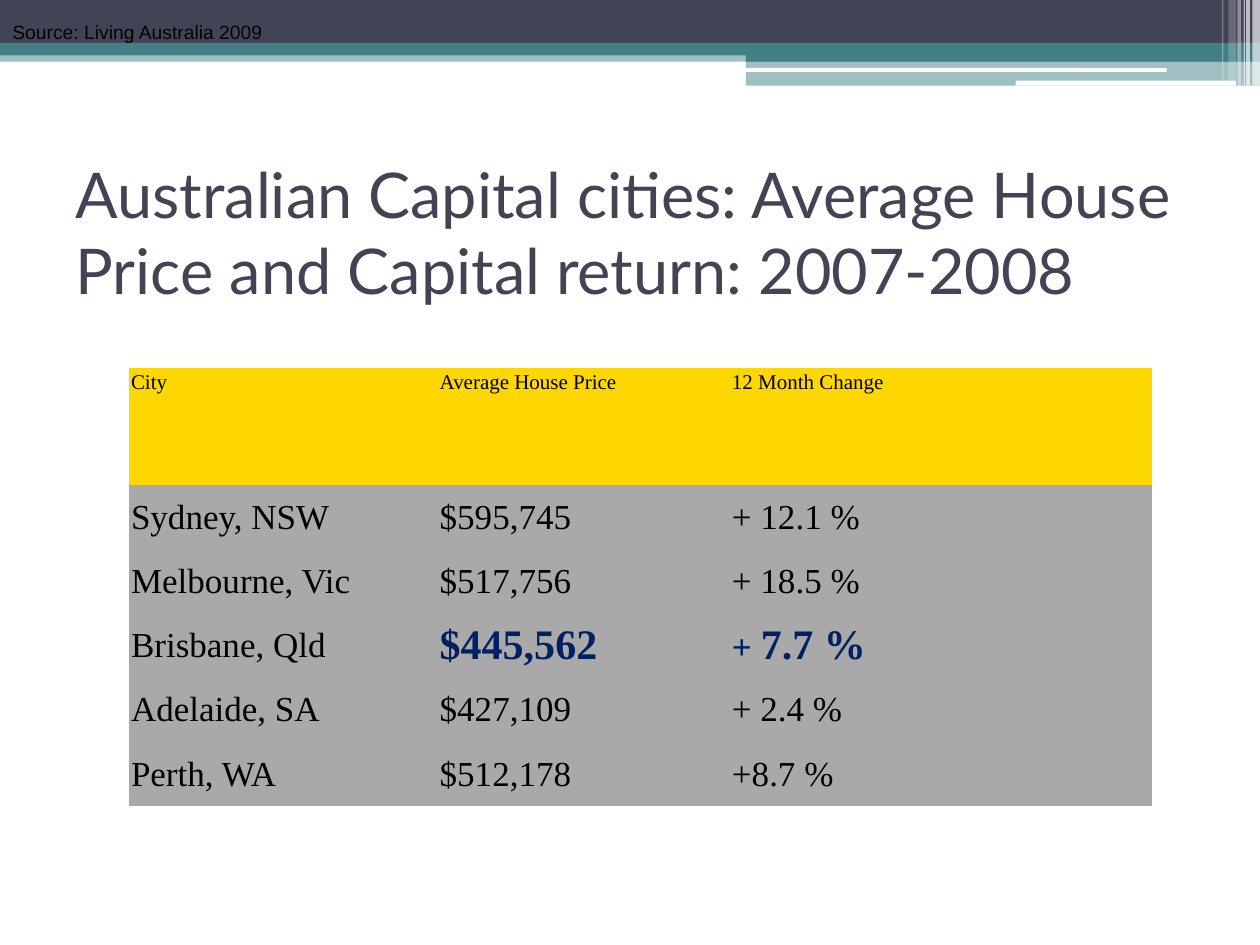
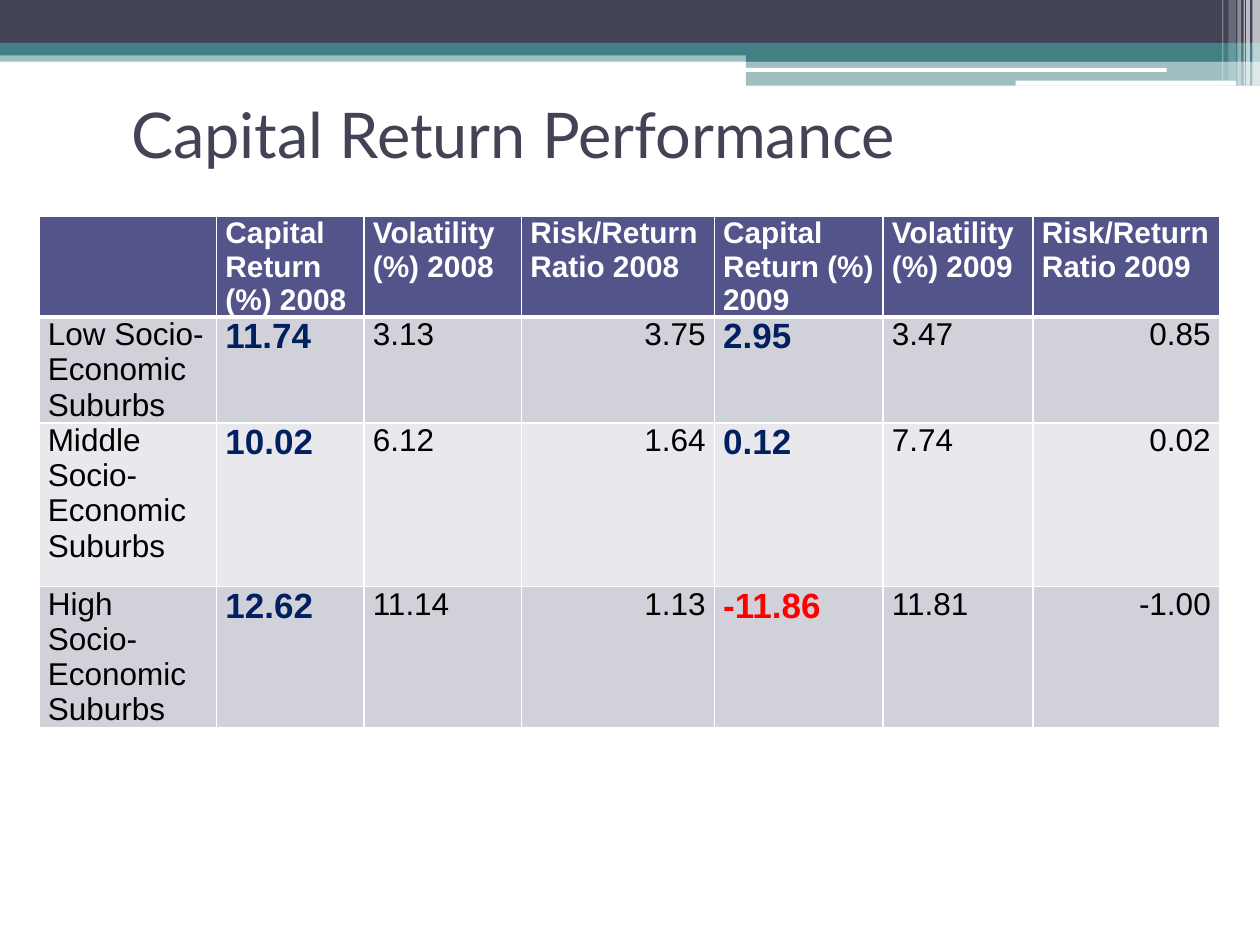
from lxml import etree
from pptx import Presentation
from pptx.dml.color import RGBColor
from pptx.enum.shapes import MSO_SHAPE
from pptx.enum.text import MSO_ANCHOR, MSO_AUTO_SIZE, PP_ALIGN
from pptx.oxml.ns import qn
from pptx.util import Inches, Pt

RECT, ROUNDED = MSO_SHAPE.RECTANGLE, MSO_SHAPE.ROUNDED_RECTANGLE
TOP, MIDDLE = MSO_ANCHOR.TOP, MSO_ANCHOR.MIDDLE
LEFT, RIGHT = PP_ALIGN.LEFT, PP_ALIGN.RIGHT
PLAIN_TABLE = "{2D5ABB26-0587-4C30-8999-92F81FD0307C}"

COLORS = {
    "ink": "424456", "teal": "438086", "white": "FFFFFF", "black": "000000",
    "gold": "FFD700", "gray": "A9A9A9", "navy": "002060", "red": "FF0000",
    "indigo": "53548A", "lilac": "D1D1DA", "pale": "E9E9ED",
}

prs = Presentation()
prs.slide_width, prs.slide_height = Inches(10), Inches(7.5)
# The slide is a grid of 100 columns by 75 rows
COL, ROW = prs.slide_width / 100, prs.slide_height / 75


def box(left, top, width, height):
    return round(left * COL), round(top * ROW), round(width * COL), round(height * ROW)


def write(paragraph, text, color, **font_values):
    run = paragraph.add_run()
    run.text = text
    for name, value in font_values.items():
        setattr(run.font, name, value)
    run.font.color.rgb = RGBColor.from_string(COLORS[color])


# Header bands: preset, grid box, colour, opacity in percent
HEADER_BANDS = [
    (RECT, (0, 4, 100, 0.9), "teal", 50),
    (RECT, (0, 0, 100, 3.4), "ink", 100),
    (RECT, (0, 3.4, 100, 1), "teal", 100),
    (RECT, (59.2, 3.9, 40.8, 1), "teal", 100),
    (RECT, (59.2, 4.8, 40.8, 2), "teal", 50),
    (ROUNDED, (59.1, 5.4, 33.5, 0.3), "white", 100),
    (ROUNDED, (80.6, 6.4, 17.5, 0.4), "white", 100),
]
# Light stripes in the corner: left, width, height, opacity
for left, width, height, opacity in [
    (99.4, 0.6, 6.8, 65), (98.9, 0.3, 6.8, 65), (98.7, 0.1, 6.8, 60),
    (98.2, 0.3, 6.8, 40), (97.5, 0.6, 6.4, 20), (97, 0.1, 6.4, 30),
]:
    HEADER_BANDS.append((RECT, (left, 0, width, height), "white", opacity))

TITLE_FONT = {"color": "ink", "name": "Lato", "size": Pt(36)}
SERIF, SANS = "Times New Roman", "Arial"
price_accent = {"color": "navy", "size": Pt(24), "bold": True}
return_accent = {"color": "navy", "size": Pt(20), "bold": True}

# Content of the slides
house_prices = {
    "title": "Australian Capital cities: Average House Price and Capital return: 2007-2008",
    "title_box": (5, 12.5, 90, 11.7),
    "source": "Source: Living Australia 2009",
    "table_box": (10.2, 29.2, 81.2, 34.8),
    "columns": [24.5, 23.2, 33.5],
    "rows": [9.3] + [5.1] * 5,
    "cells": [
        ["City", "Average House Price", "12 Month Change"],
        ["Sydney, NSW", "$595,745", "+ 12.1 %"],
        ["Melbourne, Vic", "$517,756", "+ 18.5 %"],
        ["Brisbane, Qld", "$445,562", "+ 7.7 %"],
        ["Adelaide, SA", "$427,109", "+ 2.4 %"],
        ["Perth, WA", "$512,178", "+8.7 %"],
    ],
    "header": {"color": "black", "name": SERIF, "size": Pt(12)},
    "body": {"color": "black", "name": SERIF, "size": Pt(20)},
    "accents": {(3, 1): price_accent, (3, 2): price_accent},
    "small_sign": (3, 2),
    "fills": ["gold"] + ["gray"] * 5,
    "anchor": MIDDLE,
    "margins": (0.02, 0.02),
    "right_columns": [],
    "ruled": False,
}
capital_returns = {
    "title": "Capital Return Performance",
    "title_box": (9.4, 7, 85, 7.2),
    "source": None,
    "table_box": (3.1, 17.2, 93.7, 40.3),
    "columns": [14.1, 11.7, 12.5, 15.3, 13.4, 11.9, 14.8],
    "rows": [7.9, 8.3, 13, 11.1],
    "cells": [
        [""] + [f"{measure} {year}" for year in (2008, 2009)
                for measure in ("Capital Return (%)", "Volatility (%)", "Risk/Return Ratio")],
        ["Low Socio-Economic Suburbs", "11.74", "3.13", "3.75", "2.95", "3.47", "0.85"],
        ["Middle Socio-Economic Suburbs", "10.02", "6.12", "1.64", "0.12", "7.74", "0.02"],
        ["High Socio-Economic Suburbs", "12.62", "11.14", "1.13", "-11.86", "11.81", "-1.00"],
    ],
    "header": {"color": "white", "name": SANS, "size": Pt(17), "bold": True},
    "body": {"color": "black", "name": SANS, "size": Pt(18)},
    "accents": {(row, column): return_accent for row in (1, 2, 3) for column in (1, 4)}
    | {(3, 4): return_accent | {"color": "red"}},
    "small_sign": None,
    "fills": ["indigo", "lilac", "pale", "lilac"],
    "anchor": TOP,
    "margins": (0.07, 0),
    "right_columns": [3, 6],
    "ruled": True,
}

for content in (house_prices, capital_returns):
    slide = prs.slides.add_slide(prs.slide_layouts[5])

    # Header bands
    for preset, band_box, color, opacity in HEADER_BANDS:
        band = slide.shapes.add_shape(preset, *box(*band_box))
        band.shadow.inherit = False
        band.line.fill.background()
        band.fill.solid()
        band.fill.fore_color.rgb = RGBColor.from_string(COLORS[color])
        if opacity < 100:
            tint = band.fill._xPr.find(".//" + qn("a:srgbClr"))
            etree.SubElement(tint, qn("a:alpha"), val=str(opacity * 1000))

    # Title
    title = slide.shapes.title
    title.left, title.top, title.width, title.height = box(*content["title_box"])
    title.text_frame.auto_size = MSO_AUTO_SIZE.NONE
    title.text_frame.vertical_anchor = MIDDLE
    heading = title.text_frame.paragraphs[0]
    heading.alignment = LEFT
    write(heading, content["title"], **TITLE_FONT)

    # Table
    cells = content["cells"]
    table = slide.shapes.add_table(
        len(cells), len(cells[0]), *box(*content["table_box"])).table
    table._tbl.tblPr.find(qn("a:tableStyleId")).text = PLAIN_TABLE
    for column, width in zip(table.columns, content["columns"]):
        column.width = round(width * COL)
    for row, height in zip(table.rows, content["rows"]):
        row.height = round(height * ROW)

    side, edge = (Inches(margin) for margin in content["margins"])
    for r, texts in enumerate(cells):
        for c, text in enumerate(texts):
            cell = table.cell(r, c)
            cell_values = {
                "margin_left": side, "margin_right": side,
                "margin_top": edge, "margin_bottom": edge,
                "vertical_anchor": content["anchor"] if r else TOP,
            }
            for name, value in cell_values.items():
                setattr(cell, name, value)

            # White rules, thicker under the header row
            if content["ruled"]:
                widths = {"lnL": 1, "lnR": 1, "lnT": 3 if r == 1 else 1,
                          "lnB": 3 if r == 0 else 1}
                for tag, points in widths.items():
                    rule = etree.SubElement(
                        cell._tc.get_or_add_tcPr(), qn("a:" + tag), w=str(Pt(points)))
                    paint = etree.SubElement(rule, qn("a:solidFill"))
                    etree.SubElement(paint, qn("a:srgbClr"), val=COLORS["white"])
            cell.fill.solid()
            cell.fill.fore_color.rgb = RGBColor.from_string(COLORS[content["fills"][r]])

            # Cell text
            font = content["body"] if r else content["header"]
            font = font | content["accents"].get((r, c), {})
            paragraph = cell.text_frame.paragraphs[0]
            if r and c in content["right_columns"]:
                paragraph.alignment = RIGHT
            if (r, c) == content["small_sign"]:
                write(paragraph, text[:2], **font | {"size": content["body"]["size"]})
                text = text[2:]
            if text:
                write(paragraph, text, **font)

    # Source line
    if content["source"]:
        source = slide.shapes.add_textbox(*box(0, 0, 100, 5)).text_frame
        source.word_wrap = True
        source.vertical_anchor = MIDDLE
        write(source.paragraphs[0], content["source"], "black", name=SANS, size=Pt(11))

prs.save("out.pptx")
